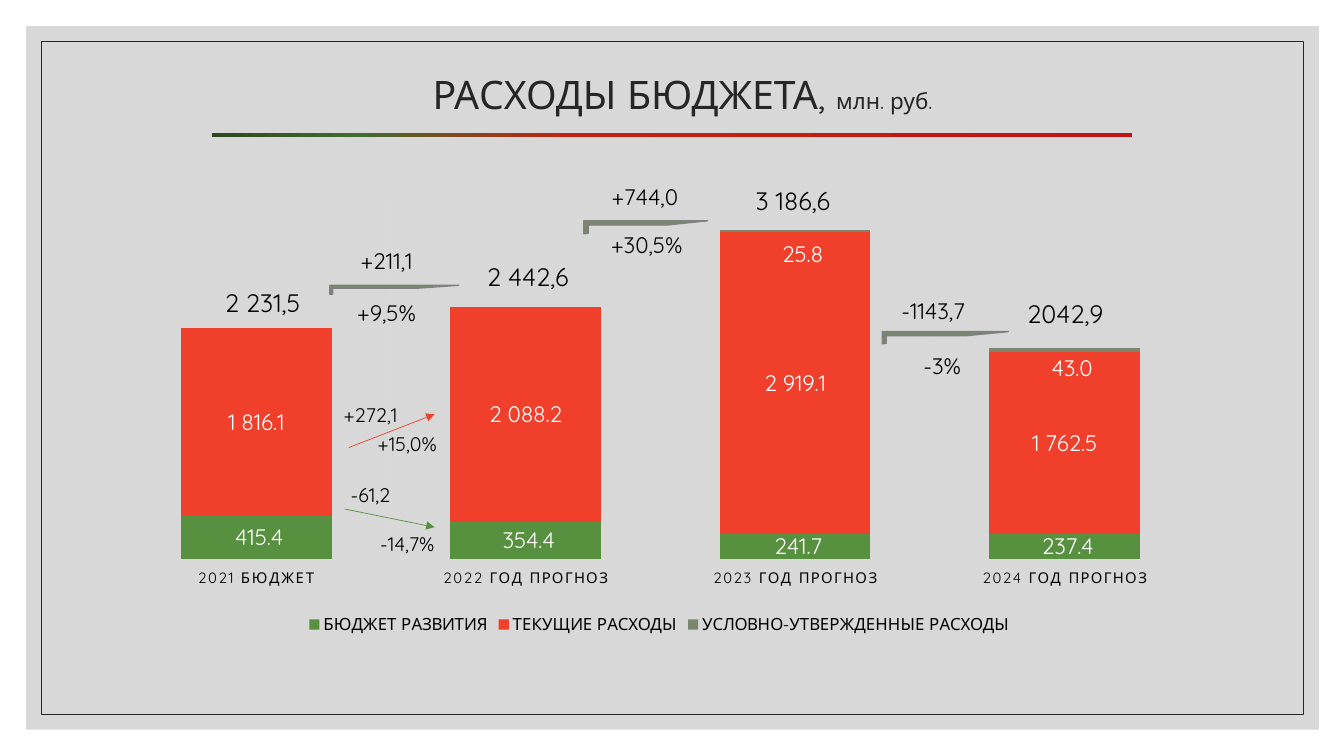
from lxml import etree
from pptx import Presentation
from pptx.chart.data import CategoryChartData as Data
from pptx.dml.color import RGBColor
from pptx.enum.chart import XL_CHART_TYPE as Kind, XL_LABEL_POSITION as Spot
from pptx.enum.chart import XL_LEGEND_POSITION as Side, XL_TICK_MARK as Tick
from pptx.enum.chart import XL_TICK_LABEL_POSITION as Place
from pptx.enum.shapes import MSO_CONNECTOR as Link, MSO_SHAPE as Form
from pptx.enum.text import MSO_ANCHOR as Anchor, PP_ALIGN as Align
from pptx.oxml import parse_xml
from pptx.oxml.ns import nsdecls, qn
from pptx.util import Inches, Pt

FONT = "Quicksand"
BLACK = RGBColor(0, 0, 0)
WHITE = RGBColor(0xFF, 0xFF, 0xFF)
DARK = RGBColor(0x26, 0x26, 0x26)
PANEL = RGBColor(0xBF, 0xBF, 0xBF)
GRID = RGBColor(0xD9, 0xD9, 0xD9)
EDGE = RGBColor(0x80, 0x80, 0x80)
GREEN = RGBColor(0x57, 0x90, 0x3F)
RED = RGBColor(0xF0, 0x3F, 0x2B)
OLIVE = RGBColor(0x7A, 0x87, 0x6E)
STOPS = [
    (0, RGBColor(0x2C, 0x48, 0x20)),
    (16, RGBColor(0x41, 0x6C, 0x2F)),
    (39, RGBColor(0xC6, 0x21, 0x0E)),
    (100, RGBColor(0xC2, 0x14, 0x14)),
]
FORMAT = r"#\ ##0.0"
YEARS = ["2021 БЮДЖЕТ", "2022 ГОД ПРОГНОЗ", "2023 ГОД ПРОГНОЗ", "2024 ГОД ПРОГНОЗ"]
SERIES = [
    ("БЮДЖЕТ РАЗВИТИЯ", [415.4, 354.4, 241.7, 237.4], GREEN),
    ("ТЕКУЩИЕ РАСХОДЫ", [1816.1, 2088.2, 2919.1, 1762.5], RED),
    ("УСЛОВНО-УТВЕРЖДЕННЫЕ РАСХОДЫ", [None, None, 25.8, 43], OLIVE),
]
SHIFTS = {2: 0.05, 3: 0.04}
TOTALS = [
    (0.89, 1.01, "2 231,5"),
    (3.52, 0.75, "2 442,6"),
    (6.15, 0, "3 186,6"),
    (8.85, 1.12, "2042,9"),
]
STEPS = [
    ((3.27, 2.83, 1.28, 0.09), (-0.06, -0.43, "+211,1"), (-0.06, 0.09, "+9,5%")),
    ((5.79, 2.19, 1.23, 0.13), (-0.02, -0.42, "+744,0"), (0, 0.05, "+30,5%")),
    ((8.75, 3.29, 1.25, 0.12), (-0.12, -0.39, "-1143,7"), (-0.03, 0.15, "-3%")),
]
TRENDS = [
    ((3.05, 3.95), "+272,1", "+15,0%", 0.29, (0.41, 0.49, 1.26, 0.16), RED),
    ((3.05, 4.74), "-61,2", "-14,7%", 0.49, (0.37, 0.31, 1.26, 0.49), GREEN),
]


def style(font, size, color):
    font.name, font.size, font.bold = FONT, Pt(size), False
    font.color.rgb = color


def write(slide, box, text, size):
    frame = slide.shapes.add_textbox(*map(Inches, box)).text_frame
    frame.word_wrap = True
    para = frame.paragraphs[0]
    para.text = text
    para.alignment = Align.CENTER
    style(para.runs[0].font, size, BLACK)
    return frame


def block(slide, form, box, fill=None, line=None, width=1):
    shape = slide.shapes.add_shape(form, *map(Inches, box))
    shape.shadow.inherit = False
    if fill is None:
        shape.fill.background()
    else:
        shape.fill.solid()
        shape.fill.fore_color.rgb = fill
    if line is None:
        shape.line.fill.background()
    else:
        shape.line.color.rgb = line
        shape.line.width = Pt(width)
    return shape


def border(slide, box):
    x, y, w, h = box
    panel = block(slide, Form.RECTANGLE, box, PANEL)
    tint = panel.fill._xPr.find(".//" + qn("a:srgbClr"))
    etree.SubElement(tint, qn("a:alpha")).set("val", "60000")
    inner = (x + 0.15, y + 0.15, w - 0.3, h - 0.3)
    block(slide, Form.RECTANGLE, inner, line=DARK, width=0.5)


def heading(slide, box):
    x, y, w, h = box
    frame = write(slide, box, "РАСХОДЫ БЮДЖЕТА, ", 28)
    frame.vertical_anchor = Anchor.MIDDLE
    para = frame.paragraphs[0]
    para.line_spacing = 0.9
    unit = para.add_run()
    unit.text = "млн. руб."
    for run, size in zip(para.runs, (28, 16)):
        style(run.font, size, DARK)
    rule = block(slide, Form.RECTANGLE, (x + 0.83, y + h, 9.13, 0.04))
    rule.fill.gradient()
    rule.fill.gradient_angle = 0
    stops = rule._element.spPr.find(".//" + qn("a:gsLst"))
    stops.clear()
    for pos, color in STOPS:
        stop = etree.SubElement(stops, qn("a:gs"), pos=str(pos * 1000))
        etree.SubElement(stop, qn("a:srgbClr"), val=str(color))


def layout(xywh, inner=False):
    marks = '<c:layoutTarget val="inner"/>' if inner else ""
    if inner:
        marks += '<c:xMode val="edge"/><c:yMode val="edge"/>'
    marks += "".join(f'<c:{k} val="{v}"/>' for k, v in zip("xywh", xywh))
    space = nsdecls("c")
    return parse_xml(f"<c:layout {space}><c:manualLayout>{marks}</c:manualLayout></c:layout>")


def shift(series, spots):
    for index in spots:
        label = series.points[index].data_label
        style(label.font, 16, WHITE)
        label.position = Spot.CENTER
    for node in series._element.iter(qn("c:dLbl")):
        mark = node.find(qn("c:idx"))
        form = etree.Element(qn("c:numFmt"), formatCode=FORMAT, sourceLinked="0")
        mark.addnext(form)
        mark.addnext(layout((0.004, spots[int(mark.get("val"))])))


def columns(slide, box):
    data = Data(number_format=FORMAT)
    data.categories = YEARS
    for name, values, color in SERIES:
        data.add_series(name, values)
    chart = slide.shapes.add_chart(Kind.COLUMN_STACKED, *map(Inches, box), data).chart
    style(chart.font, 10, BLACK)
    chart.has_title = False
    chart.has_legend = True
    chart.legend.position = Side.BOTTOM
    chart.legend.include_in_layout = False
    style(chart.legend.font, 12, BLACK)
    plot = chart.plots[0]
    plot.gap_width, plot.overlap, plot.vary_by_categories = 79, 100, False
    for series, (name, values, color) in zip(plot.series, SERIES):
        series.format.fill.solid()
        series.format.fill.fore_color.rgb = color
        labels = series.data_labels
        labels.show_value = True
        labels.position = Spot.CENTER
        labels.number_format, labels.number_format_is_linked = FORMAT, False
        style(labels.font, 16, WHITE)
    shift(plot.series[2], SHIFTS)
    axis = chart.category_axis
    axis.major_tick_mark = axis.minor_tick_mark = Tick.NONE
    axis.tick_label_position = Place.LOW
    axis.has_major_gridlines = True
    for line in (axis.format.line, axis.major_gridlines.format.line):
        line.color.rgb, line.width = GRID, Pt(0.75)
    style(axis.tick_labels.font, 10.6, BLACK)
    axis._element.find(".//" + qn("a:defRPr")).set("spc", "120")
    scale = chart.value_axis
    scale.minimum_scale, scale.maximum_scale = 0, 3500
    scale.has_major_gridlines = False
    scale.visible = False
    area = chart._chartSpace.find(".//" + qn("c:plotArea"))
    for old in area.findall(qn("c:layout")):
        area.remove(old)
    area.insert(0, layout((0.015, 0.037, 0.972, 0.788), True))
    for x, y, text in TOTALS:
        write(slide, (box[0] + x, box[1] + y, 1.35, 0.4), text, 18)


def step(slide, box, *notes):
    block(slide, Form.HALF_FRAME, box, OLIVE, EDGE)
    for x, y, text in notes:
        write(slide, (box[0] + x, box[1] + y, 1.25, 0.37), text, 16)


def trend(slide, spot, change, share, drop, ends, color):
    x, y = spot
    write(slide, (x, y, 1.25, 0.34), change, 14)
    write(slide, (x + 0.37, y + drop, 1.24, 0.34), share, 14)
    points = [Inches(a + b) for a, b in zip(ends, (x, y, x, y))]
    arrow = slide.shapes.add_connector(Link.STRAIGHT, *points)
    arrow.line.color.rgb, arrow.line.width = color, Pt(0.5)
    etree.SubElement(arrow.line._get_or_add_ln(), qn("a:tailEnd"), type="triangle")
    etree.SubElement(arrow._element.spPr, qn("a:effectLst"))


def main():
    deck = Presentation()
    deck.slide_width, deck.slide_height = Inches(13.33), Inches(7.5)
    slide = deck.slides.add_slide(deck.slide_layouts[6])
    border(slide, (0.26, 0.26, 12.82, 6.98))
    heading(slide, (1.27, 0.61, 11, 0.71))
    columns(slide, (1.04, 1.79, 11, 4.55))
    for item in STEPS:
        step(slide, *item)
    for item in TRENDS:
        trend(slide, *item)
    deck.save("out.pptx")


if __name__ == "__main__":
    main()
